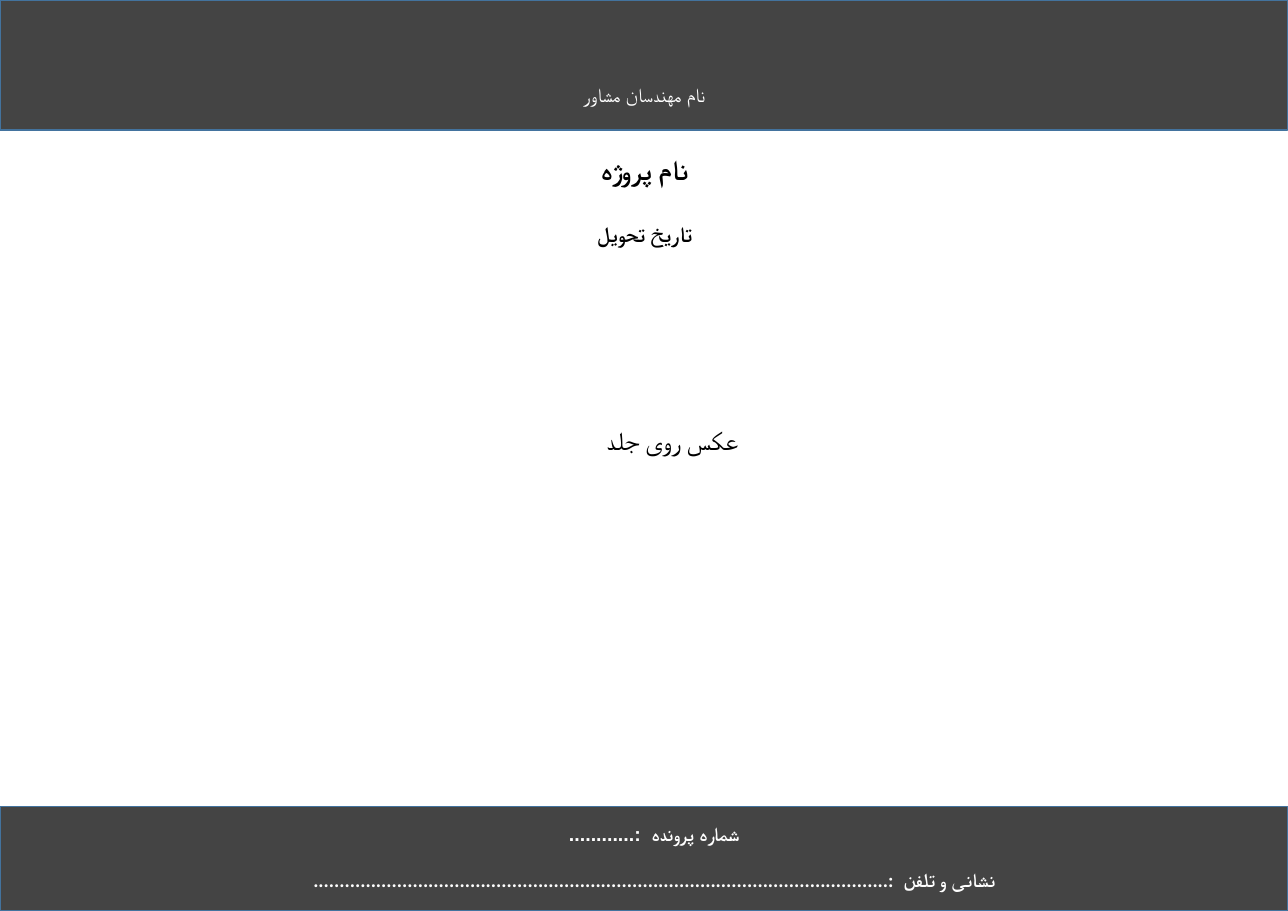
from dataclasses import dataclass

from lxml.etree import SubElement
from pptx import Presentation
from pptx.dml.color import RGBColor
from pptx.enum.shapes import MSO_SHAPE
from pptx.enum.text import MSO_ANCHOR, MSO_AUTO_SIZE, PP_ALIGN
from pptx.oxml.ns import qn
from pptx.util import Cm, Pt


@dataclass(frozen=True)
class Theme:
    band = RGBColor(0x44, 0x44, 0x44)
    border = RGBColor(0x43, 0x73, 0x9E)
    dark = RGBColor(0, 0, 0)
    light = RGBColor(0xFF, 0xFF, 0xFF)
    title_size = Pt(25.9)
    caption_size = Pt(24.4)
    date_size = Pt(20)
    band_size = Pt(18.1)
    title_gap = Pt(31.6)
    footer_gap = Pt(21.5)


@dataclass(frozen=True)
class Box:
    left: float
    top: float
    width: float
    height: float

    def lengths(self):
        return Cm(self.left), Cm(self.top), Cm(self.width), Cm(self.height)

    def inside(self, left, top, width, height):
        return Box(self.left + left, self.top + top, width, height)


theme = Theme()
PAGE = Box(0, 0, 42, 29.7)


def add_band(page, box):
    band = page.shapes.add_shape(MSO_SHAPE.RECTANGLE, *box.lengths())
    band.shadow.inherit = False
    band.fill.solid()
    band.fill.fore_color.rgb = theme.band
    band.line.color.rgb = theme.border
    band.line.width = Pt(1)


def add_text_box(page, box):
    frame = page.shapes.add_textbox(*box.lengths()).text_frame
    frame.word_wrap = True
    return frame


def write_line(para, text, size, color, face, bold=False, rtl=True, gap=None):
    para.alignment = PP_ALIGN.CENTER
    if rtl:
        para._p.get_or_add_pPr().set("rtl", "1")
    if gap is not None:
        para.space_before = gap
    span = para.add_run()
    span.text = text
    span.font.size = size
    span.font.bold = bold
    span.font.color.rgb = color
    span.font.name = face
    SubElement(span._r.get_or_add_rPr(), qn("a:cs")).set("typeface", face)


def add_header(page, box):
    add_band(page, box)
    frame = add_text_box(page, box.inside(15.14, 2.59, 11.73, 1.04))
    write_line(frame.paragraphs[0], "نام مهندسان مشاور",
               theme.band_size, theme.light, "Arial")


def add_project_title(page, box):
    title = page.shapes.title
    title.left, title.top, title.width, title.height = box.lengths()
    frame = title.text_frame
    frame.word_wrap = True
    frame.auto_size = MSO_AUTO_SIZE.NONE
    frame.vertical_anchor = MSO_ANCHOR.TOP
    write_line(frame.paragraphs[0], "نام پروژه",
               theme.title_size, theme.dark, "Calibri", bold=True)
    write_line(frame.add_paragraph(), "تاریخ تحویل", theme.date_size,
               theme.dark, "Calibri", bold=True, gap=theme.title_gap)


def add_cover_caption(page, box):
    frame = add_text_box(page, box)
    write_line(frame.paragraphs[0], "عکس روی جلد",
               theme.caption_size, theme.dark, "Calibri", rtl=False)


def add_footer(page, box):
    add_band(page, box)
    frame = add_text_box(page, box.inside(9.65, 0.36, 23.37, 3.0))
    write_line(frame.paragraphs[0], "شماره پرونده  :" + "." * 12,
               theme.band_size, theme.light, "Arial", bold=True)
    write_line(frame.add_paragraph(), "نشانی و تلفن  :" + "." * 110,
               theme.band_size, theme.light, "Calibri", bold=True,
               gap=theme.footer_gap)


def main():
    deck = Presentation()
    deck.slide_width, deck.slide_height = Cm(PAGE.width), Cm(PAGE.height)
    page = deck.slides.add_slide(deck.slide_layouts[5])
    add_header(page, PAGE.inside(0, 0, PAGE.width, 4.24))
    add_project_title(page, PAGE.inside(10.16, 4.85, 21.72, 3.33))
    add_cover_caption(page, PAGE.inside(15.14, 13.69, 13.56, 1.3))
    add_footer(page, PAGE.inside(0, 26.3, PAGE.width, 3.4))
    deck.save("out.pptx")


if __name__ == "__main__":
    main()
